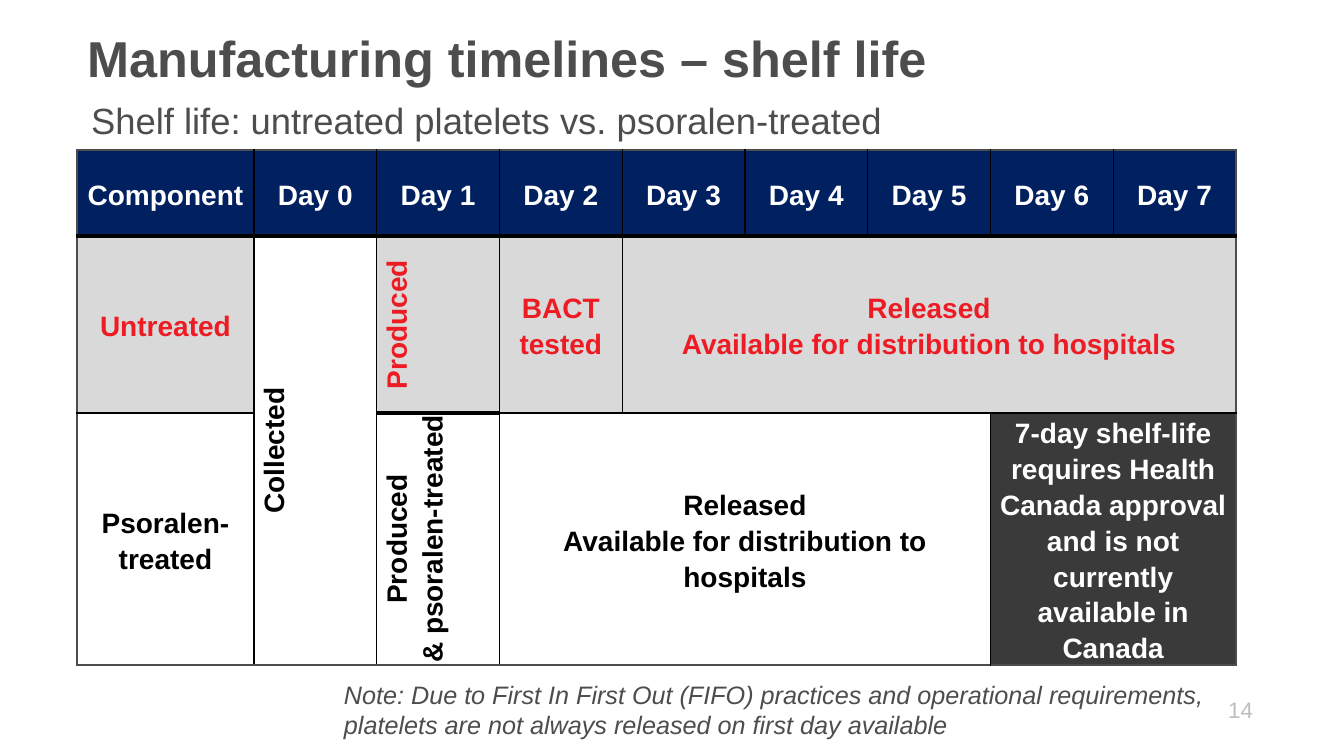
from itertools import product
from lxml.etree import SubElement
from pptx import Presentation
from pptx.dml.color import RGBColor
from pptx.enum.text import MSO_ANCHOR, MSO_AUTO_SIZE, PP_ALIGN
from pptx.oxml.ns import qn
from pptx.util import Pt

HUES = {"text": "4D4D4D", "page": "BEBEBE", "navy": "002060", "grey": "D9D9D9",
        "dark": "3A3A3A", "white": "FFFFFF", "black": "000000", "red": "ED1C24"}
TITLE = ["Manufacturing timelines – shelf life"]
LEAD = ["Shelf life:\u00a0untreated platelets vs. psoralen-treated"]
NOTE = ["Note: Due to First In First Out (FIFO) practices and operational requirements, "
        "platelets are not always released on first day available"]
PAGE = ["14"]
FREE = ["Released", "Available for distribution to hospitals"]
HEAD = ["Component"] + [f"Day {day}" for day in range(8)]
BLOCKS = [(0, col, 1, 1, [word], "navy", "white", False) for col, word in enumerate(HEAD)] + [
    (1, 0, 1, 1, ["Untreated"], "grey", "red", False),
    (1, 1, 2, 1, ["Collected"], "white", "black", True),
    (1, 2, 1, 1, ["Produced"], "grey", "red", True),
    (1, 3, 1, 1, ["BACT tested"], "grey", "red", False),
    (1, 4, 1, 5, FREE, "grey", "red", False),
    (2, 0, 1, 1, ["Psoralen- treated"], "white", "black", False),
    (2, 2, 1, 1, ["Produced", "& psoralen-treated"], "white", "black", True),
    (2, 3, 1, 4, FREE, "white", "black", False),
    (2, 7, 1, 2, ["7-day shelf-life requires Health Canada approval and is not "
                  "currently available in Canada"], "dark", "white", False),
]
GRID = (77, 150, 1159, 515)
ROWS = [86, 177, 252]
FIRST = 177
THICK = {(1, 0, 9), (2, 2, 3)}
SCALE = 914400 / 100.8
FONT = {"name": "Arial", "bold": False, "italic": False}
CELL = {"margin_left": 0, "margin_right": 0, "margin_top": 0, "margin_bottom": 0,
        "vertical_anchor": MSO_ANCHOR.MIDDLE}


def px(size):
    return round(size * SCALE)


def apply(item, form):
    for key, value in form.items():
        setattr(item, key, value)


def write(frame, lines, hue, font, para, plain=False):
    frame.text = "\n".join(lines)
    for part in frame.paragraphs:
        if plain:
            props = part._p.get_or_add_pPr()
            props.set("marL", "0")
            props.set("indent", "0")
            SubElement(props, qn("a:buNone"))
        apply(part, para)
        for run in part.runs:
            apply(run.font, FONT | font)
            run.font.color.rgb = RGBColor.from_string(HUES[hue])


def place(shape, box, anchor):
    apply(shape, dict(zip(("left", "top", "width", "height"), map(px, box))))
    apply(shape.text_frame, {"word_wrap": True, "auto_size": MSO_AUTO_SIZE.NONE,
                             "vertical_anchor": anchor})
    return shape.text_frame


def edge(cell, side, hue, width):
    line = SubElement(cell._tc.get_or_add_tcPr(), qn(f"a:ln{side}"), w=str(Pt(width)))
    fill = SubElement(line, qn("a:solidFill"))
    SubElement(fill, qn("a:srgbClr"), val=HUES[hue])


def border(cell, row, col, spot, block):
    top, left, high, wide = block
    low, right = top + high, left + wide
    sides = {"L": (col == left, left == 0, None),
             "R": (col == right - 1, right == len(HEAD), None),
             "T": (row == top, top == 0, top),
             "B": (row == low - 1, low == len(ROWS), low)}
    for side, (outer, rim, level) in sides.items():
        if outer or spot:
            thick = any(level == y and a <= left < b for y, a, b in THICK)
            edge(cell, side, "text" if rim else "black", 2.5 if thick else 1)


def build_grid(slide):
    table = slide.shapes.add_table(len(ROWS), len(HEAD), *map(px, GRID)).table
    apply(table, {"first_row": False, "horz_banding": False})
    day = (GRID[2] - FIRST) / (len(HEAD) - 1)
    for col, column in enumerate(table.columns):
        column.width = px(day if col else FIRST)
    for row, high in zip(table.rows, ROWS):
        row.height = px(high)
    for top, left, high, wide, lines, fill, hue, turn in BLOCKS:
        root = table.cell(top, left)
        if high * wide > 1:
            root.merge(table.cell(top + high - 1, left + wide - 1))
        for row, col in product(range(top, top + high), range(left, left + wide)):
            cell = table.cell(row, col)
            border(cell, row, col, cell.is_merge_origin, (top, left, high, wide))
            cell.fill.solid()
            cell.fill.fore_color.rgb = RGBColor.from_string(HUES[fill])
        apply(root, CELL)
        if turn:
            root._tc.get_or_add_tcPr().set("vert", "vert270")
        write(root.text_frame, lines, hue, {"size": Pt(20), "bold": True},
              {"alignment": PP_ALIGN.CENTER, "line_spacing": 1.15})


def main():
    deck = Presentation()
    apply(deck, {"slide_width": px(1344), "slide_height": px(756)})
    slide = deck.slides.add_slide(deck.slide_layouts[1])
    shapes = slide.shapes
    title, body = slide.placeholders
    write(place(title, (77, 13, 1167, 80), MSO_ANCHOR.BOTTOM), TITLE, "text",
          {"size": Pt(36), "bold": True}, {"alignment": PP_ALIGN.LEFT, "line_spacing": 0.9})
    write(place(body, (81, 98, 1159, 521), MSO_ANCHOR.TOP), LEAD, "text",
          {"size": Pt(26)}, {"line_spacing": 0.9, "space_before": Pt(0)}, True)
    build_grid(slide)
    note, page = (shapes.add_textbox(0, 0, 0, 0) for _ in range(2))
    write(place(note, (334, 674, 900, 72), MSO_ANCHOR.TOP), NOTE, "text",
          {"size": Pt(18), "italic": True}, {})
    write(place(page, (96, 667, 1167, 89), MSO_ANCHOR.MIDDLE), PAGE, "page",
          {"size": Pt(16)}, {"alignment": PP_ALIGN.RIGHT, "line_spacing": 0.9})
    deck.save("out.pptx")


if __name__ == "__main__":
    main()
